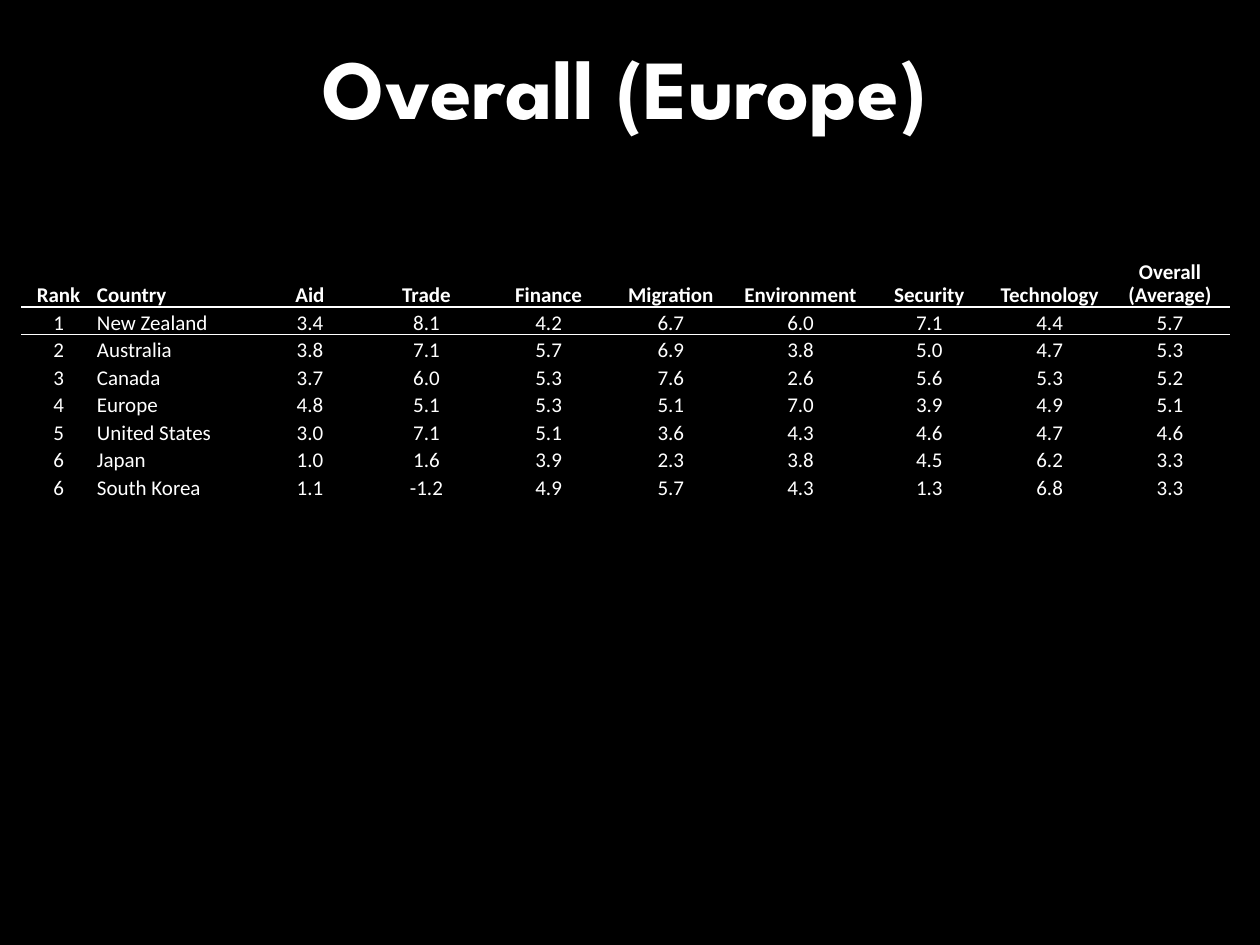
from typing import NamedTuple

from lxml import etree
from pptx import Presentation
from pptx.dml.color import RGBColor
from pptx.enum.text import MSO_ANCHOR, MSO_AUTO_SIZE, PP_ALIGN
from pptx.oxml.ns import qn
from pptx.util import Inches, Pt

LEFT, CENTER = PP_ALIGN.LEFT, PP_ALIGN.CENTER
MIDDLE, BOTTOM = MSO_ANCHOR.MIDDLE, MSO_ANCHOR.BOTTOM
FIXED = MSO_AUTO_SIZE.NONE

WIDE, HIGH = Inches(10), Inches(7.5)
COLORS = {"back": "000000", "text": "FFFFFF", "rule": "FFFFFF"}
PLAIN = "{2D5ABB26-0587-4C30-8999-92F81FD0307C}"  # table style without grid

TITLE = {"name": "League Spartan", "size": Pt(48), "bold": True}
HEAD = {"name": "Calibri", "size": Pt(12), "bold": True}
BODY = HEAD | {"bold": False}


class Box(NamedTuple):
    """Shares of the slide's width and height."""
    x: float
    y: float
    w: float
    h: float


class Field(NamedTuple):
    """A table column: heading, share of the slide's width, alignment."""
    name: str
    w: float
    align: PP_ALIGN = CENTER


FIELDS = [
    Field("Rank", 0.059),
    Field("Country", 0.126, LEFT),
    Field("Aid", 0.088),
    Field("Trade", 0.097),
    Field("Finance", 0.097),
    Field("Migration", 0.097),
    Field("Environment", 0.109),
    Field("Security", 0.0955),
    Field("Technology", 0.0955),
    Field("Overall (Average)", 0.0955),
]
SCORES = [
    ("1", "New Zealand", "3.4", "8.1", "4.2", "6.7", "6.0", "7.1", "4.4", "5.7"),
    ("2", "Australia", "3.8", "7.1", "5.7", "6.9", "3.8", "5.0", "4.7", "5.3"),
    ("3", "Canada", "3.7", "6.0", "5.3", "7.6", "2.6", "5.6", "5.3", "5.2"),
    ("4", "Europe", "4.8", "5.1", "5.3", "5.1", "7.0", "3.9", "4.9", "5.1"),
    ("5", "United States", "3.0", "7.1", "5.1", "3.6", "4.3", "4.6", "4.7", "4.6"),
    ("6", "Japan", "1.0", "1.6", "3.9", "2.3", "3.8", "4.5", "6.2", "3.3"),
    ("6", "South Korea", "1.1", "-1.2", "4.9", "5.7", "4.3", "1.3", "6.8", "3.3"),
]
TITLE_BOX = Box(0.05, 0.5 / 7.5, 0.892, 0.37 / 7.5)
TABLE_BOX = Box(0.017, 2 / 7.5, sum(f.w for f in FIELDS), 1.97 / 7.5)
UNITS = 9  # the heading takes two units of height, each score row one


def place(box: Box) -> tuple:
    return (int(box.x * WIDE), int(box.y * HIGH),
            int(box.w * WIDE), int(box.h * HIGH))


def write(frame, text: str, style: dict, align: PP_ALIGN) -> None:
    para = frame.paragraphs[0]
    para.alignment = align
    run = para.add_run()
    run.text = text
    for key, value in style.items():
        setattr(run.font, key, value)
    run.font.color.rgb = RGBColor.from_string(COLORS["text"])


def rule(cell, side: str) -> None:
    """Draw a one-point line on a side of the cell."""
    line = etree.Element(qn(f"a:{side}"), w=str(Pt(1)))
    fill = etree.SubElement(line, qn("a:solidFill"))
    etree.SubElement(fill, qn("a:srgbClr"), val=COLORS["rule"])
    cell._tc.get_or_add_tcPr().insert(0, line)


def draw_title(slide, text: str) -> None:
    frame = slide.shapes.add_textbox(*place(TITLE_BOX)).text_frame
    form = {"word_wrap": True, "auto_size": FIXED, "vertical_anchor": MIDDLE,
            "margin_top": 0, "margin_bottom": 0}
    for key, value in form.items():
        setattr(frame, key, value)
    write(frame, text, TITLE, CENTER)


def draw_cell(cell, text: str, style: dict, align: PP_ALIGN) -> None:
    pad = Inches(0.01)
    form = {"vertical_anchor": BOTTOM, "margin_left": pad, "margin_right": pad,
            "margin_top": pad, "margin_bottom": 0}
    for key, value in form.items():
        setattr(cell, key, value)
    cell.fill.background()
    write(cell.text_frame, text, style, align)
    cell.text_frame.paragraphs[0].line_spacing = 0.9


def draw_table(slide) -> None:
    rows = [tuple(f.name for f in FIELDS), *SCORES]
    frame = slide.shapes.add_table(len(rows), len(FIELDS), *place(TABLE_BOX))
    table = frame.table
    table.first_row = table.horz_banding = False
    table._tbl.tblPr.find(qn("a:tableStyleId")).text = PLAIN

    # Column and row sizes
    for col, field in zip(table.columns, FIELDS):
        col.width = int(field.w * WIDE)
    unit = TABLE_BOX.h * HIGH / UNITS
    for r, row in enumerate(table.rows):
        row.height = int(unit * (1 if r else 2))

    # Cells, with a rule between heading and scores
    for r, row in enumerate(rows):
        for c, (text, field) in enumerate(zip(row, FIELDS)):
            cell = table.cell(r, c)
            draw_cell(cell, text, BODY if r else HEAD, field.align)
            if r < 2:
                rule(cell, "lnT" if r else "lnB")


def main() -> None:
    deck = Presentation()
    deck.slide_width, deck.slide_height = WIDE, HIGH
    slide = deck.slides.add_slide(deck.slide_layouts[6])
    back = slide.background.fill
    back.solid()
    back.fore_color.rgb = RGBColor.from_string(COLORS["back"])
    draw_title(slide, "Overall (Europe)")
    draw_table(slide)
    deck.save("out.pptx")


if __name__ == "__main__":
    main()
